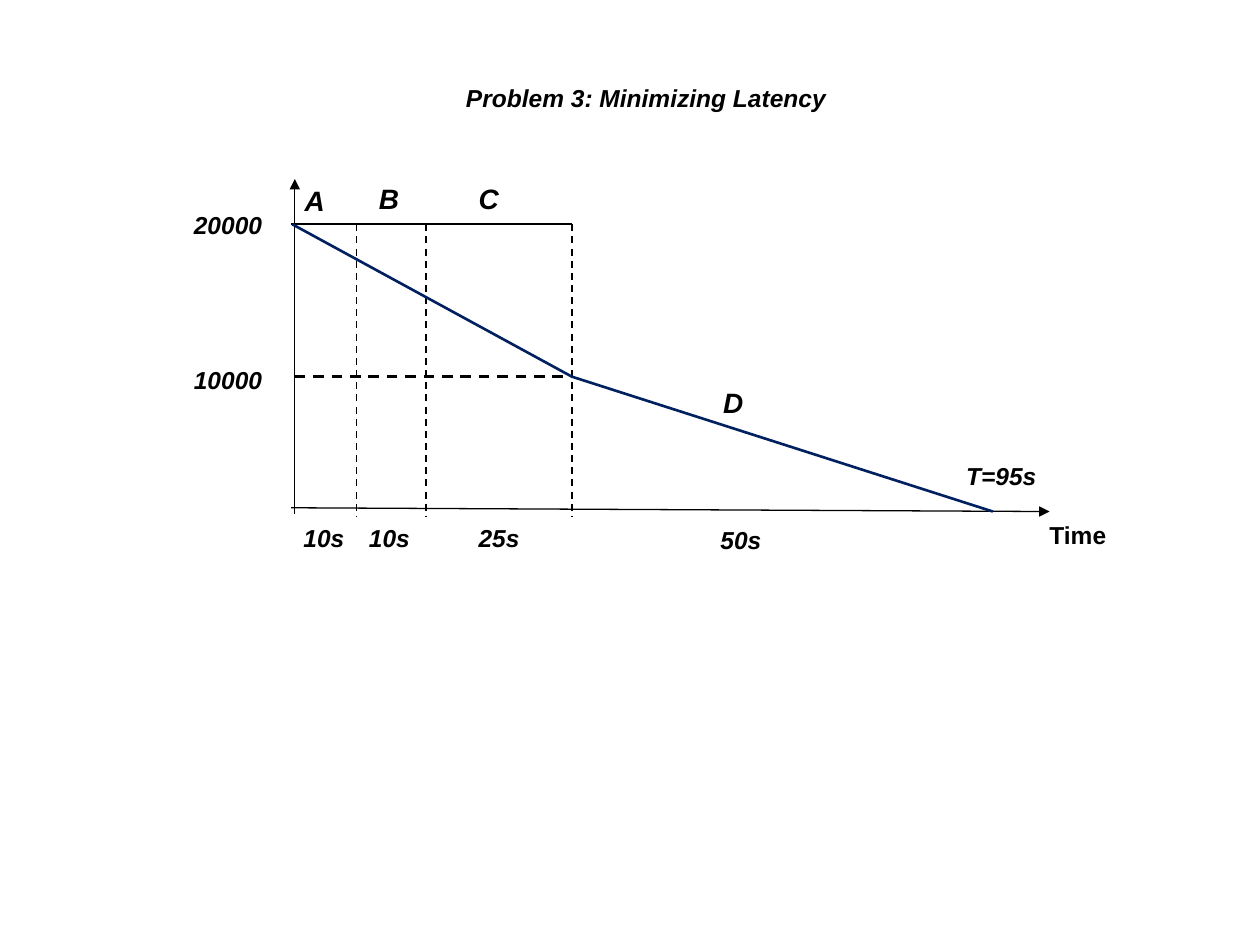
import itertools
from dataclasses import dataclass

import pptx
import pptx.dml.color
import pptx.enum.dml
import pptx.enum.shapes
import pptx.enum.text
import pptx.oxml
import pptx.oxml.ns
import pptx.util

Inches = pptx.util.Inches


@dataclass(frozen=True)
class Theme:
    font: str = "Arial"
    ink: str = "000000"
    curve: str = "002060"
    body: int = 14
    letter: int = 16
    axis: float = 0.75
    thin: float = 1
    thick: float = 1.5


THEME = Theme()


def add_label(slide, box, text, size=THEME.body, italic=True, wrap=True):
    tb = slide.shapes.add_textbox(*map(Inches, box))
    tf = tb.text_frame
    tf.text = text
    tf.word_wrap = wrap
    tf.auto_size = pptx.enum.text.MSO_AUTO_SIZE.SHAPE_TO_FIT_TEXT
    font = tf.paragraphs[0].runs[0].font
    font.name, font.size = THEME.font, pptx.util.Pt(size)
    font.bold, font.italic = True, italic
    font.color.rgb = pptx.dml.color.RGBColor.from_string(THEME.ink)


def add_line(slide, start, end, width=THEME.thin, color=THEME.ink, dash=False, arrow=False):
    cx = slide.shapes.add_connector(
        pptx.enum.shapes.MSO_CONNECTOR.STRAIGHT, *map(Inches, (*start, *end)))
    cx.line.width = pptx.util.Pt(width)
    cx.line.color.rgb = pptx.dml.color.RGBColor.from_string(color)
    if dash:
        cx.line.dash_style = pptx.enum.dml.MSO_LINE.DASH
    if arrow:
        tail = pptx.oxml.parse_xml(
            f'<a:tailEnd {pptx.oxml.ns.nsdecls("a")} type="triangle"/>')
        cx.line._get_or_add_ln().append(tail)
    effects = pptx.oxml.parse_xml(f'<a:effectLst {pptx.oxml.ns.nsdecls("a")}/>')
    cx._element.spPr.append(effects)


def add_title(slide, box):
    add_label(slide, box, "Problem 3: Minimizing Latency")


def add_latency_plot(slide, box):
    left, top, width, height = box
    full, half, turn = top + 0.36, top + 1.57, left + 2.2

    add_line(slide, (left - 0.03, top + height - 0.03), (left + width, top + height),
             THEME.axis, arrow=True)
    add_line(slide, (left, top + height + 0.02), (left, top), THEME.axis, arrow=True)
    for x1, x2 in itertools.pairwise((-0.03, 0.57, 1.17, 2.2)):
        add_line(slide, (left + x1, full), (left + x2, full))

    add_line(slide, (left, half), (turn, half), THEME.thick, dash=True)
    for x in (0.49, 1.04, 2.2):
        add_line(slide, (left + x, full), (left + x, top + height + 0.04), dash=True)

    points = ((left - 0.02, full), (turn, half), (left + 5.54, top + height))
    for start, end in itertools.pairwise(points):
        add_line(slide, start, end, THEME.thick, THEME.curve)

    for text, x, y in (("A", -0.02, -0.01), ("B", 0.57, -0.03),
                       ("C", 1.36, -0.03), ("D", 3.3, 1.59)):
        add_label(slide, (left + x, top + y, 0.66, 0.37), text, THEME.letter)
    for text, x, y in (("10s", -0.03, 2.68), ("10s", 0.49, 2.68),
                       ("25s", 1.36, 2.68), ("50s", 3.28, 2.7)):
        add_label(slide, (left + x, top + y, 0.66, 0.34), text)
    for text, y in (("20000", 0.2), ("10000", 1.43)):
        add_label(slide, (left - 0.9, top + y, 0.85, 0.34), text)
    add_label(slide, (left + 5.23, top + 2.19, 0.76, 0.34), "T=95s", wrap=False)
    add_label(slide, (left + 5.89, top + 2.66, 0.65, 0.33), "Time",
              italic=False, wrap=False)


def main():
    prs = pptx.Presentation()
    prs.slide_width, prs.slide_height = Inches(10), Inches(7.5)
    slide = prs.slides.add_slide(prs.slide_layouts[6])
    add_title(slide, (3.6, 0.61, 5.73, 0.34))
    add_latency_plot(slide, (2.34, 1.42, 5.99, 2.64))
    prs.save("out.pptx")


if __name__ == "__main__":
    main()
